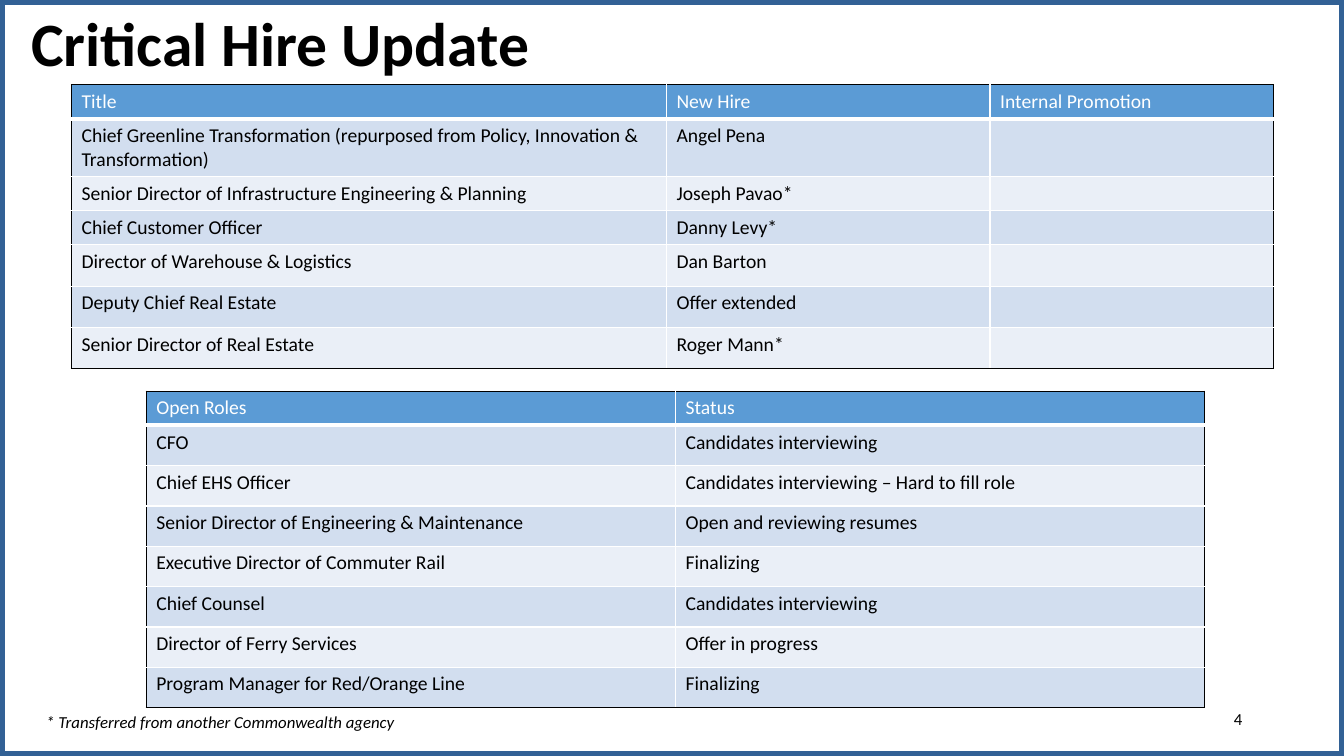
from pptx import Presentation
from pptx.dml.color import RGBColor
from pptx.enum.shapes import MSO_SHAPE
from pptx.enum.text import MSO_ANCHOR, PP_ALIGN
from pptx.oxml.ns import qn
from pptx.util import Inches, Pt
from lxml.etree import SubElement

COLORS = {
    "frame": "326195",
    "head": "5B9BD5",
    "odd": "D2DEEF",
    "even": "EAEFF7",
    "black": "000000",
    "white": "FFFFFF",
}
FONT = "Calibri"
WIDTH, HEIGHT = 13.33, 7.5

HIRES = [
    ("Title", "New Hire", "Internal Promotion"),
    ("Chief Greenline Transformation (repurposed from Policy, Innovation & Transformation)",
     "Angel Pena", ""),
    ("Senior Director of Infrastructure Engineering & Planning", "Joseph Pavao*", ""),
    ("Chief Customer Officer", "Danny Levy*", ""),
    ("Director of Warehouse & Logistics", "Dan Barton", ""),
    ("Deputy Chief Real Estate", "Offer extended", ""),
    ("Senior Director of Real Estate", "Roger Mann*", ""),
]
ROLES = [
    ("Open Roles", "Status"),
    ("CFO", "Candidates interviewing"),
    ("Chief EHS Officer", "Candidates interviewing – Hard to fill role"),
    ("Senior Director of Engineering & Maintenance", "Open and reviewing resumes"),
    ("Executive Director of Commuter Rail", "Finalizing"),
    ("Chief Counsel", "Candidates interviewing"),
    ("Director of Ferry Services", "Offer in progress"),
    ("Program Manager for Red/Orange Line", "Finalizing"),
]


def color(name):
    return RGBColor.from_string(COLORS[name])


def style(para, size, ink="black", bold=False, italic=False):
    font = para.font
    font.name, font.size = FONT, Pt(size)
    font.bold, font.italic = bold, italic
    font.color.rgb = color(ink)


def add_frame(slide):
    frame = slide.shapes.add_shape(
        MSO_SHAPE.RECTANGLE, 0, 0, Inches(WIDTH), Inches(HEIGHT))
    frame.shadow.inherit = False
    frame.fill.background()
    frame.line.color.rgb = color("frame")
    frame.line.width = Pt(7)


def add_text(slide, box, text, size, anchor=MSO_ANCHOR.MIDDLE,
             align=PP_ALIGN.LEFT, spacing=1.0, **look):
    frame = slide.shapes.add_textbox(*map(Inches, box)).text_frame
    frame.word_wrap = True
    frame.vertical_anchor = anchor
    para = frame.paragraphs[0]
    para.text = text
    para.alignment = align
    para.line_spacing = spacing
    style(para, size, **look)


def add_edge(cell, side, ink, points):
    line = SubElement(cell._tc.get_or_add_tcPr(), qn(f"a:ln{side}"), w=str(Pt(points)))
    fill = SubElement(line, qn("a:solidFill"))
    SubElement(fill, qn("a:srgbClr"), val=COLORS[ink])


def add_grid(slide, left, top, widths, heights, rows):
    shape = slide.shapes.add_table(
        len(rows), len(widths), Inches(left), Inches(top),
        Inches(sum(widths)), Inches(sum(heights)))
    table = shape.table
    for column, width in zip(table.columns, widths):
        column.width = Inches(width)
    for row, height in zip(table.rows, heights):
        row.height = Inches(height)

    last_row, last_col = len(rows) - 1, len(widths) - 1
    for r, row in enumerate(rows):
        for c, text in enumerate(row):
            cell = table.cell(r, c)
            # Black outside edges, white inside edges
            outer = {"L": c == 0, "R": c == last_col, "T": r == 0, "B": r == last_row}
            for side, is_outer in outer.items():
                thick = 3 if r == 0 and side == "B" else 1
                add_edge(cell, side, "black" if is_outer else "white", thick)
            # Header, then banded rows
            band = "head" if r == 0 else "odd" if r % 2 else "even"
            cell.fill.solid()
            cell.fill.fore_color.rgb = color(band)
            para = cell.text_frame.paragraphs[0]
            style(para, 14, "white" if r == 0 else "black")
            if text:
                para.text = text
            else:
                # Keeps an empty cell as low as its row
                SubElement(para._p, qn("a:endParaRPr"), sz="1400")


def build_slide(deck):
    slide = deck.slides.add_slide(deck.slide_layouts[6])
    add_frame(slide)
    # Title and page number
    add_text(slide, (0.21, 0.23, 11.5, 0.46), "Critical Hire Update", 44,
             spacing=0.9, bold=True)
    add_text(slide, (9.42, 6.93, 3, 0.4), "4", 12, align=PP_ALIGN.RIGHT)
    # Filled and open roles
    add_grid(slide, 0.71, 0.84, [5.9, 3.21, 2.81],
             [0.34, 0.57, 0.34, 0.34] + [0.41] * 3, HIRES)
    add_grid(slide, 1.45, 3.88, [5.25] * 2, [0.34] + [0.4] * 7, ROLES)
    # Footnote
    add_text(slide, (0.36, 7.01, 9.39, 0.3),
             "* Transferred from another Commonwealth agency", 12,
             anchor=MSO_ANCHOR.TOP, italic=True)


def main():
    deck = Presentation()
    deck.slide_width, deck.slide_height = Inches(WIDTH), Inches(HEIGHT)
    build_slide(deck)
    deck.save("out.pptx")


if __name__ == "__main__":
    main()
